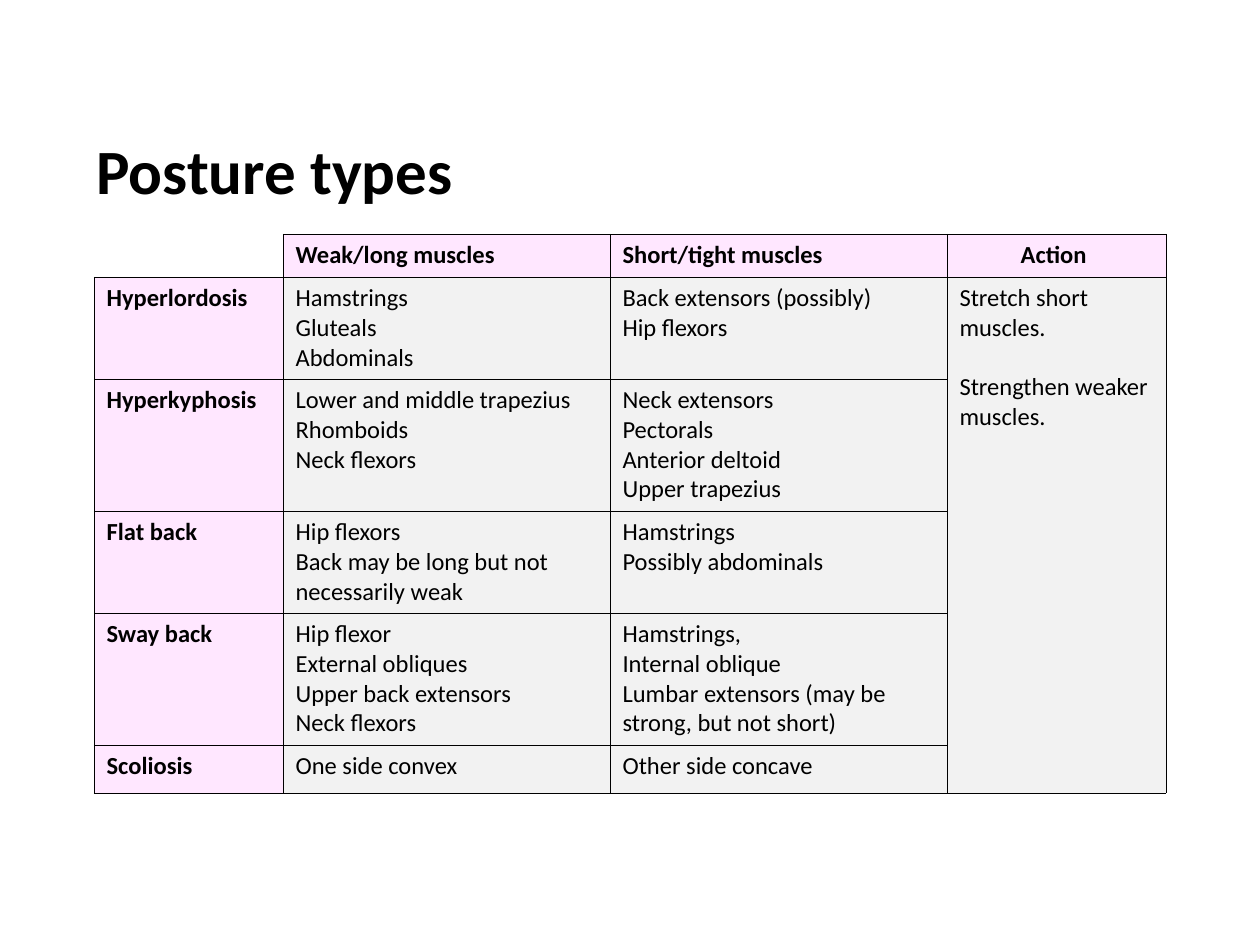
import lxml.etree
import pptx
import pptx.dml.color
import pptx.enum.text
import pptx.oxml.ns
import pptx.util

PX = 914400 / 126
BLACK = pptx.dml.color.RGBColor(0x00, 0x00, 0x00)
PINK = pptx.dml.color.RGBColor(0xFF, 0xE7, 0xFF)
GREY = pptx.dml.color.RGBColor(0xF2, 0xF2, 0xF2)
BODY_SIZE = 14

COLUMN_WIDTHS = [189, 327, 337, 219]
ROW_HEIGHTS = [43, 102, 132, 102, 132, 48]
# A new line starts a paragraph; \v is a line break inside one
POSTURES = [
    ["", "Weak/long muscles", "Short/tight muscles", "Action "],
    ["Hyperlordosis", "Hamstrings\nGluteals\nAbdominals",
     "Back extensors (possibly)\nHip flexors",
     "Stretch short muscles.\nStrengthen weaker muscles."],
    ["Hyperkyphosis", "Lower and middle trapezius\nRhomboids\nNeck flexors",
     "Neck extensors\nPectorals\nAnterior deltoid\nUpper trapezius", ""],
    ["Flat back", "Hip flexors\vBack may be long but not necessarily weak",
     "Hamstrings\nPossibly abdominals", ""],
    ["Sway back", "Hip flexor\nExternal obliques\nUpper back extensors\nNeck flexors",
     "Hamstrings,\nInternal oblique\n"
     "Lumbar extensors (may be strong, but not short)", ""],
    ["Scoliosis", "One side convex", "Other side concave", ""],
]


def px(length):
    return pptx.util.Emu(round(length * PX))


def format_text(frame, size, bold):
    looks = {"name": "Calibri", "size": pptx.util.Pt(size), "bold": bold}
    for paragraph in frame.paragraphs:
        for run in paragraph.runs:
            for attribute, value in looks.items():
                setattr(run.font, attribute, value)
            run.font.color.rgb = BLACK
        # Keeps empty cells from growing their row
        lxml.etree.SubElement(paragraph._p, pptx.oxml.ns.qn("a:endParaRPr"),
                              sz=str(size * 100))


def set_borders(cell, drawn_sides):
    properties = cell._tc.get_or_add_tcPr()
    for side in "LRTB":
        line = lxml.etree.SubElement(properties, pptx.oxml.ns.qn(f"a:ln{side}"),
                                     w=str(pptx.util.Pt(0.25)))
        if side in drawn_sides:
            fill = lxml.etree.SubElement(line, pptx.oxml.ns.qn("a:solidFill"))
            lxml.etree.SubElement(fill, pptx.oxml.ns.qn("a:srgbClr"), val=str(BLACK))
        else:
            lxml.etree.SubElement(line, pptx.oxml.ns.qn("a:noFill"))


def add_heading(slide, left, top, width, height):
    heading = slide.shapes.add_textbox(px(left), px(top), px(width), px(height))
    frame = heading.text_frame
    frame.text = "Posture types"
    frame.word_wrap = False
    frame.auto_size = pptx.enum.text.MSO_AUTO_SIZE.SHAPE_TO_FIT_TEXT
    format_text(frame, 36, True)


def add_posture_table(slide, left, top):
    postures = slide.shapes.add_table(
        len(ROW_HEIGHTS), len(COLUMN_WIDTHS), px(left), px(top),
        px(sum(COLUMN_WIDTHS)), px(sum(ROW_HEIGHTS))).table
    for option in ("first_row", "horz_banding"):
        setattr(postures, option, False)
    for column, width in zip(postures.columns, COLUMN_WIDTHS):
        column.width = px(width)
    for row, height in zip(postures.rows, ROW_HEIGHTS):
        row.height = px(height)

    for r, texts in enumerate(POSTURES):
        for c, text in enumerate(texts):
            cell = postures.cell(r, c)
            is_corner = r == c == 0
            is_header = r == 0 or c == 0
            cell.text = text
            format_text(cell.text_frame, BODY_SIZE, is_header)
            set_borders(cell, "RB" if is_corner else "LRTB")
            if is_corner:
                cell.fill.background()
            else:
                cell.fill.solid()
                cell.fill.fore_color.rgb = PINK if is_header else GREY

    # One action applies to every posture
    postures.cell(0, 3).text_frame.paragraphs[0].alignment = pptx.enum.text.PP_ALIGN.CENTER
    action = postures.cell(1, 3)
    action.merge(postures.cell(len(ROW_HEIGHTS) - 1, 3))
    action.text_frame.paragraphs[1].space_before = pptx.util.Pt(17)


def main():
    deck = pptx.Presentation()
    deck.slide_width, deck.slide_height = px(1260), px(945)
    slide = deck.slides.add_slide(deck.slide_layouts[6])
    add_heading(slide, 84, 125, 386, 89)
    add_posture_table(slide, 94, 234)
    deck.save("out.pptx")


if __name__ == "__main__":
    main()
